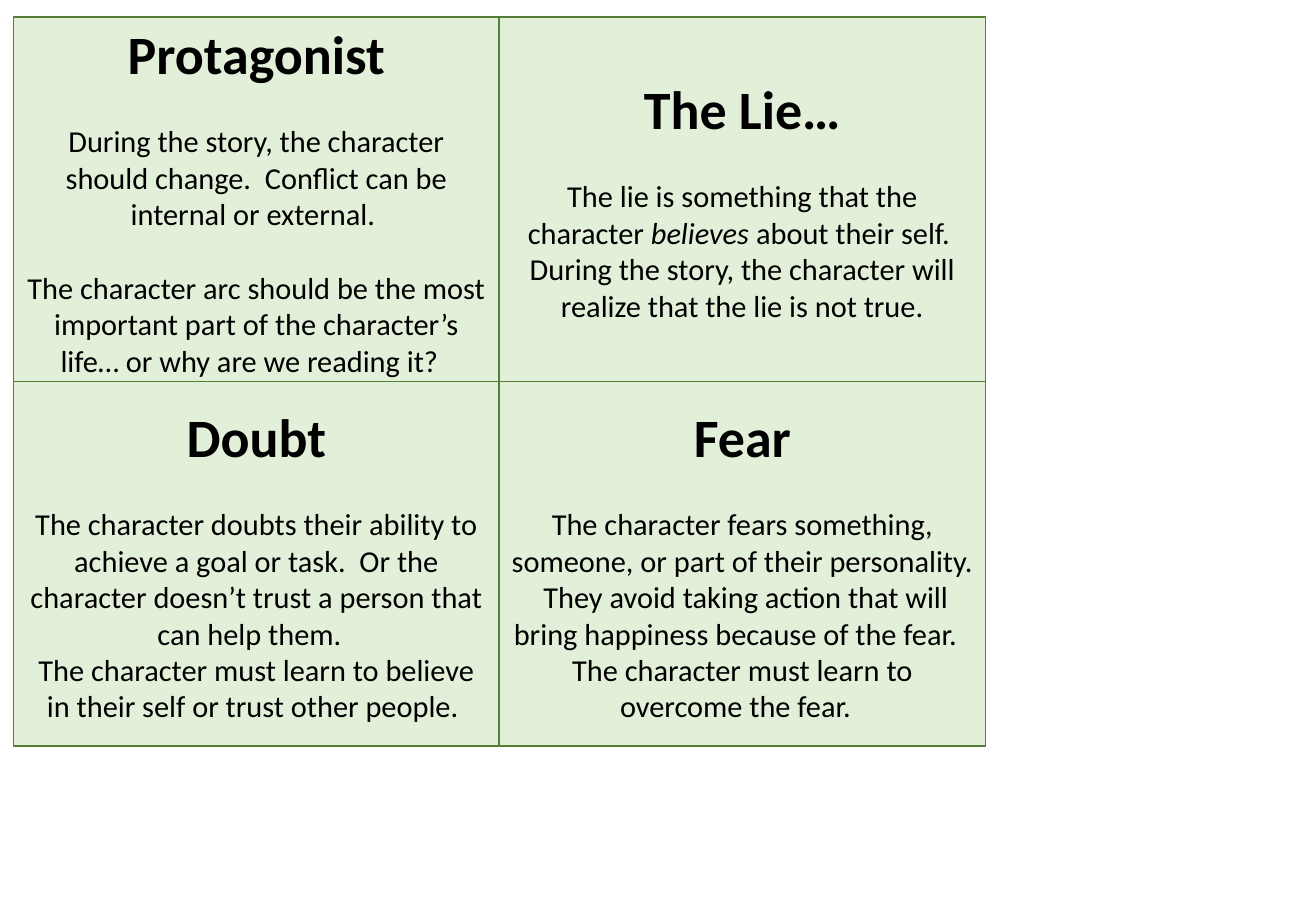
from dataclasses import dataclass

from pptx import Presentation
from pptx import util as u
from pptx.dml import color
from pptx.enum import shapes, text


@dataclass(frozen=True)
class Theme:
    font: str = "Calibri"
    ink: str = "000000"
    card_fill: str = "E2F0D9"
    card_line: str = "538035"
    title_size: int = 32
    body_size: int = 18
    gap: int = 22  # one body line, in points


@dataclass(frozen=True)
class Span:
    words: str
    italic: bool = False


@dataclass(frozen=True)
class Para:
    spans: tuple[Span, ...]
    gap_after: bool = False


@dataclass(frozen=True)
class Card:
    title: str
    body: tuple[Para, ...]


THEME = Theme()

# Grid of equal cards, in centimetres
LEFT, TOP = 0.28, 0.36
CARD_WIDTH, CARD_HEIGHT = 10.16, 7.62
COLUMNS = 2

CARDS = (
    Card("Protagonist", (
        Para((Span("During the story, the character should change.  "
                   "Conflict can be internal or external. "),), gap_after=True),
        Para((Span("The character arc should be the most important part of the "
                   "character’s life… or why are we reading it?  "),)),
    )),
    Card("The Lie…", (
        Para((Span("The lie is something that the character "),
              Span("believes", italic=True),
              Span(" about their self.  During the story, the character will "
                   "realize that the lie is not true."))),
    )),
    Card("Doubt", (
        Para((Span("The character doubts their ability to achieve a goal or task.  "
                   "Or the character doesn’t trust a person that can help them.  "),)),
        Para((Span("The character must learn to believe in their self "
                   "or trust other people. "),)),
    )),
    Card("Fear", (
        Para((Span("The character fears something, someone, or part of their "
                   "personality.  They avoid taking action that will bring "
                   "happiness because of the fear.  "),)),
        Para((Span("The character must learn to overcome the fear.  "),)),
    )),
)


def set_all(target: object, values: dict[str, object]) -> None:
    for name, value in values.items():
        setattr(target, name, value)


def write_para(para, content: Para, size: int, bold: bool = False) -> None:
    set_all(para, {
        "alignment": text.PP_ALIGN.CENTER,
        "space_before": u.Pt(0),
        "space_after": u.Pt(THEME.gap if content.gap_after else 0),
    })
    for span in content.spans:
        run = para.add_run()
        run.text = span.words
        set_all(run.font, {"name": THEME.font, "size": u.Pt(size),
                           "bold": bold, "italic": span.italic})
        run.font.color.rgb = color.RGBColor.from_string(THEME.ink)


def draw_card(page, card: Card, row: int, column: int) -> None:
    box = page.shapes.add_shape(
        shapes.MSO_SHAPE.RECTANGLE,
        u.Cm(LEFT + column * CARD_WIDTH), u.Cm(TOP + row * CARD_HEIGHT),
        u.Cm(CARD_WIDTH), u.Cm(CARD_HEIGHT))
    box.shadow.inherit = False
    box.fill.solid()
    box.fill.fore_color.rgb = color.RGBColor.from_string(THEME.card_fill)
    box.line.color.rgb = color.RGBColor.from_string(THEME.card_line)
    box.line.width = u.Pt(1)

    # Heading, then body paragraphs
    frame = box.text_frame
    set_all(frame, {"word_wrap": True, "vertical_anchor": text.MSO_ANCHOR.MIDDLE})
    heading = Para((Span(card.title),), gap_after=True)
    write_para(frame.paragraphs[0], heading, THEME.title_size, bold=True)
    for content in card.body:
        write_para(frame.add_paragraph(), content, THEME.body_size)


def main() -> None:
    deck = Presentation()
    set_all(deck, {"slide_width": u.Cm(27.51), "slide_height": u.Cm(19.05)})
    page = deck.slides.add_slide(deck.slide_layouts[6])
    for index, card in enumerate(CARDS):
        draw_card(page, card, *divmod(index, COLUMNS))
    deck.save("out.pptx")


if __name__ == "__main__":
    main()
